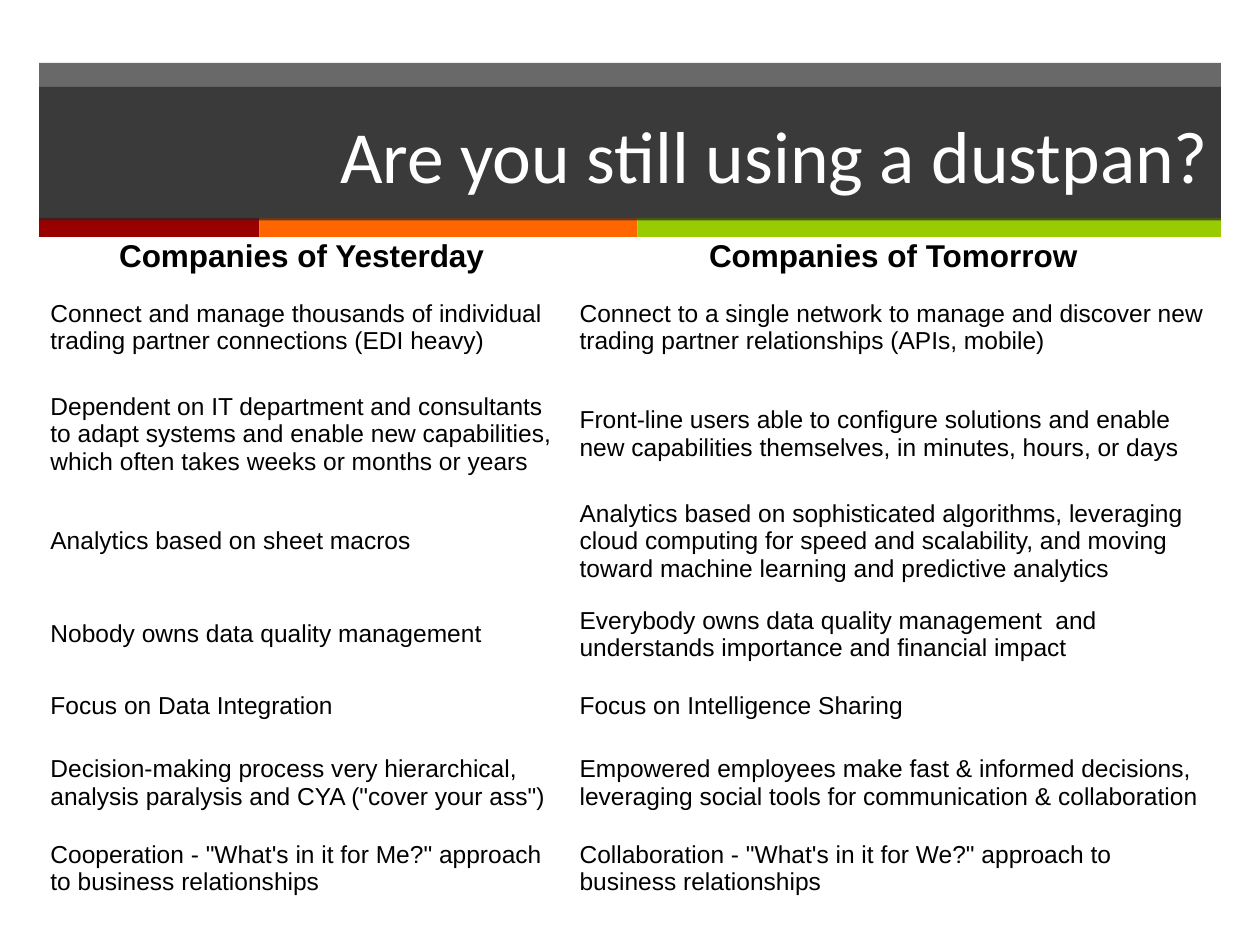
from lxml.etree import SubElement
from pptx import Presentation
from pptx.dml.color import RGBColor
from pptx.enum.shapes import MSO_SHAPE
from pptx.enum.text import MSO_ANCHOR, MSO_AUTO_SIZE, PP_ALIGN
from pptx.oxml.ns import qn
from pptx.util import Inches, Pt

BAND_LEFT = 0.31
BANDS = [(1.75, "990000"), (3, "FF6600"), (4.63, "99CC00")]
HEADINGS = [("Companies of Yesterday", 0.31, 4.17), ("Companies of Tomorrow", 4.48, 5.22)]
COLUMN_WIDTHS = [4.2, 5.21]
ROWS = [
    (0.84, "Connect and manage thousands of individual trading partner connections (EDI heavy)",
     "Connect to a single network to manage and discover new trading partner relationships (APIs, mobile)"),
    (0.85, "Dependent on IT department and consultants to adapt systems and enable new capabilities, "
     "which often takes weeks or months or years",
     "Front-line users able to configure solutions and enable new capabilities themselves, "
     "in minutes, hours, or days"),
    (0.85, "Analytics based on sheet macros",
     "Analytics based on sophisticated algorithms, leveraging cloud computing for speed and scalability, "
     "and moving toward machine learning and predictive analytics"),
    (0.63, "Nobody owns data quality management",
     "Everybody owns data quality management  and understands importance and financial impact"),
    (0.5, "Focus on Data Integration", "Focus on Intelligence Sharing"),
    (0.73, 'Decision-making process very hierarchical, analysis paralysis and CYA ("cover your ass")',
     "Empowered employees make fast & informed decisions, leveraging social tools "
     "for communication & collaboration"),
    (0.63, 'Cooperation - "What\'s in it for Me?" approach to business relationships',
     'Collaboration - "What\'s in it for We?" approach to business relationships'),
]


def set_fill(shape, color, opacity=100):
    """Fill a shape with a hex colour at an opacity in percent."""
    shape.fill.solid()
    shape.fill.fore_color.rgb = RGBColor.from_string(color)
    if opacity < 100:
        color_element = shape._element.spPr.find(qn("a:solidFill"))[0]
        SubElement(color_element, qn("a:alpha"), val=str(opacity * 1000))


def set_text(frame, text, size=14, font="Arial", color="000000", bold=False, align=PP_ALIGN.LEFT):
    """Write one formatted paragraph into a text frame."""
    frame.word_wrap = True
    paragraph = frame.paragraphs[0]
    paragraph.alignment = align
    run = paragraph.add_run()
    run.text = text
    run.font.size = Pt(size)
    run.font.name = font
    run.font.bold = bold
    run.font.color.rgb = RGBColor.from_string(color)


def set_margins(frame):
    """Give a text frame equal insets on all sides."""
    frame.margin_left = frame.margin_right = Inches(0.1)
    frame.margin_top = frame.margin_bottom = Inches(0.1)


def add_bar(slide, left, top, width, height, color, opacity=100):
    """Add a rectangle without an outline."""
    bar = slide.shapes.add_shape(
        MSO_SHAPE.RECTANGLE, Inches(left), Inches(top), Inches(width), Inches(height))
    bar.shadow.inherit = False
    bar.line.fill.background()
    set_fill(bar, color, opacity)


def add_title(slide, text):
    """Place the title placeholder in front of the bars."""
    title = slide.shapes.title
    title.left, title.top = Inches(BAND_LEFT), Inches(0.69)
    title.width, title.height = Inches(9.38), Inches(1.06)
    set_fill(title, "262626", 69)
    frame = title.text_frame
    frame.auto_size = MSO_AUTO_SIZE.NONE
    frame.vertical_anchor = MSO_ANCHOR.MIDDLE
    set_margins(frame)
    set_text(frame, text, size=42, font="Calibri", color="FFFFFF", align=PP_ALIGN.RIGHT)
    slide.shapes._spTree.append(title._element)


def add_heading(slide, text, left, width):
    """Add a bold centred column heading."""
    box = slide.shapes.add_textbox(Inches(left), Inches(1.77), Inches(width), Inches(0.41))
    set_margins(box.text_frame)
    set_text(box.text_frame, text, size=18, bold=True, align=PP_ALIGN.CENTER)


def add_comparison(slide):
    """Add the two-column comparison table."""
    height = sum(row[0] for row in ROWS)
    table = slide.shapes.add_table(
        len(ROWS), len(COLUMN_WIDTHS), Inches(0.3), Inches(2.18),
        Inches(sum(COLUMN_WIDTHS)), Inches(height)).table
    table.first_row = table.horz_banding = False
    for column, width in zip(table.columns, COLUMN_WIDTHS):
        column.width = Inches(width)
    for row, (row_height, *texts) in zip(table.rows, ROWS):
        row.height = Inches(row_height)
        for cell, text in zip(row.cells, texts):
            cell.fill.background()
            cell.vertical_anchor = MSO_ANCHOR.MIDDLE
            cell.margin_left = cell.margin_right = Inches(0.1)
            cell.margin_top = cell.margin_bottom = Inches(0.05)
            set_text(cell.text_frame, text)


def main():
    """Build and save the slide."""
    presentation = Presentation()
    presentation.slide_width, presentation.slide_height = Inches(10), Inches(7.5)
    slide = presentation.slides.add_slide(presentation.slide_layouts[5])
    add_bar(slide, BAND_LEFT, 0.5, 9.38, 1.24, "262626", 69)
    left = BAND_LEFT
    for width, color in BANDS:
        add_bar(slide, left, 1.73, width, 0.15, color)
        left += width
    add_title(slide, "Are you still using a dustpan?")
    add_comparison(slide)
    for text, left, width in HEADINGS:
        add_heading(slide, text, left, width)
    presentation.save("out.pptx")


if __name__ == "__main__":
    main()
